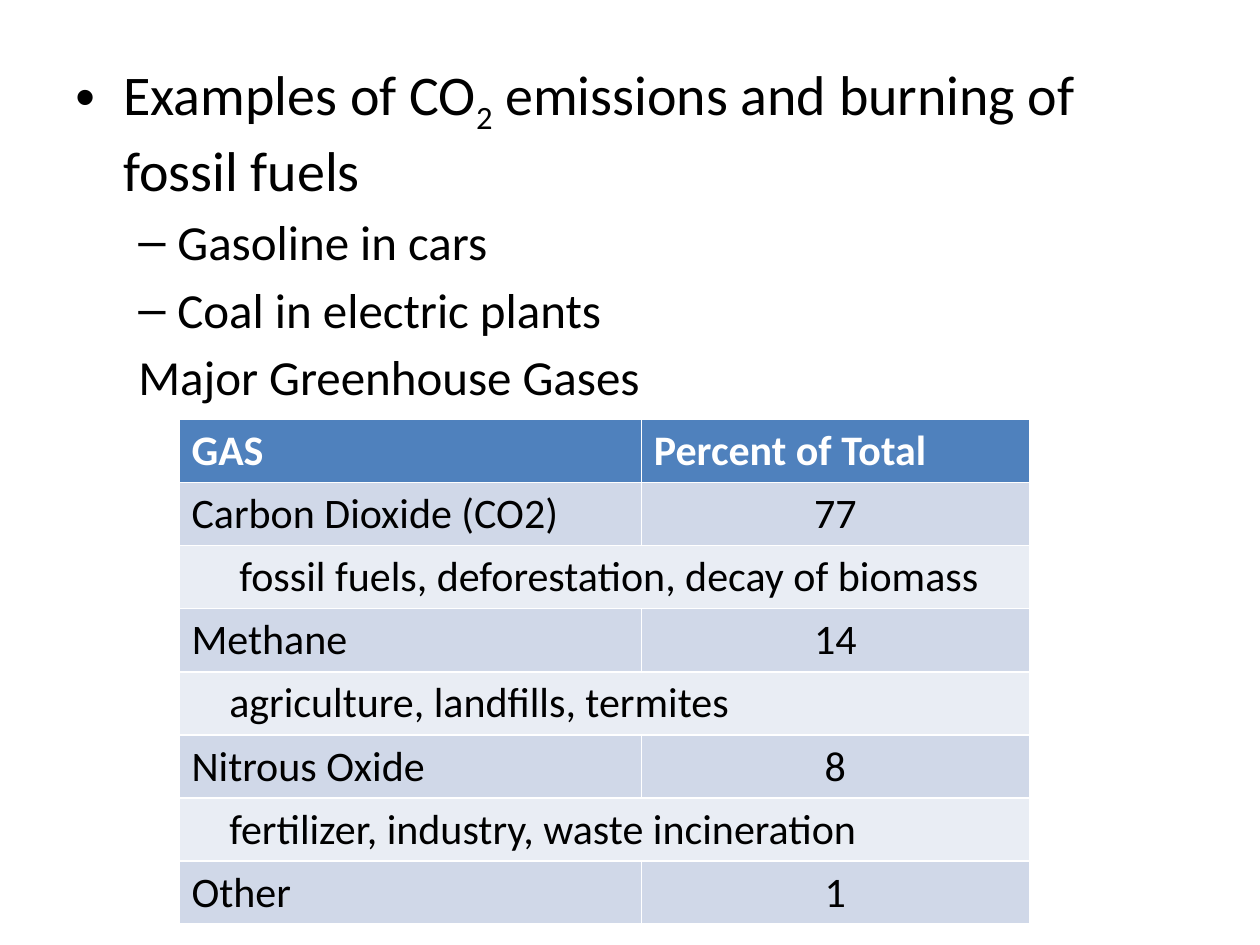
from pptx import Presentation
from pptx.dml.color import RGBColor
from pptx.enum.text import PP_ALIGN
from pptx.oxml.ns import qn
from pptx.util import Inches, Pt
from lxml.etree import SubElement


def paint(code):
    return RGBColor.from_string(code)


class Deck:
    face = "Calibri"
    ink, white = "000000", "FFFFFF"
    head, band, pale = "4F81BD", "D0D8E8", "E9EDF4"

    def __init__(self):
        self.prs = Presentation()
        self.prs.slide_width = Inches(10)
        self.prs.slide_height = Inches(7.5)
        self.slide = self.prs.slides.add_slide(self.prs.slide_layouts[6])

    def style(self, para, size, color, bold=False):
        font = para.font
        font.name, font.size, font.bold = self.face, Pt(size), bold
        font.color.rgb = paint(color)

    def body(self, items, left, top, width, height):
        box = self.slide.shapes.add_textbox(
            Inches(left), Inches(top), Inches(width), Inches(height))
        frame = box.text_frame
        frame.word_wrap = True
        for i, item in enumerate(items):
            para = frame.paragraphs[0] if i == 0 else frame.add_paragraph()
            self.point(para, *item)

    def point(self, para, parts, level, size, left, hang, mark):
        para.level = level
        para.space_before = Pt(5)
        props = para._p.get_or_add_pPr()
        props.set("marL", str(Inches(left)))
        props.set("indent", str(Inches(-hang)))
        if mark:
            SubElement(props, qn("a:buFont")).set("typeface", "Arial")
            SubElement(props, qn("a:buChar")).set("char", mark)
        else:
            SubElement(props, qn("a:buNone"))
        self.style(para, size, self.ink)
        for text, shift in parts:
            run = para.add_run()
            run.text = text
            if shift:
                run.font._element.set("baseline", str(shift * 1000))

    def cell(self, cell, text, fill, color, bold=False, mid=False, inset=0):
        cell.fill.solid()
        cell.fill.fore_color.rgb = paint(fill)
        cell.margin_left = Inches(0.1 + inset)
        para = cell.text_frame.paragraphs[0]
        para.text = text
        if mid:
            para.alignment = PP_ALIGN.CENTER
        self.style(para, 24, color, bold)

    def table(self, heads, gases, left, top, widths, step):
        rows = [(name, rate, 0) for name, rate in heads]
        for name, rate, source, inset in gases:
            rows.append((name, rate, 0))
            if source:
                rows.append((source, None, inset))
        grid = self.slide.shapes.add_table(
            len(rows), len(widths), Inches(left), Inches(top),
            Inches(sum(widths)), Inches(step * len(rows))).table
        for col, width in zip(grid.columns, widths):
            col.width = Inches(width)
        for r, (name, rate, inset) in enumerate(rows):
            first, last = grid.cell(r, 0), grid.cell(r, 1)
            if rate is None:
                first.merge(last)
                self.cell(first, name, self.pale, self.ink, inset=inset)
            elif r == 0:
                for cell, text in ((first, name), (last, rate)):
                    self.cell(cell, text, self.head, self.white, bold=True)
            else:
                self.cell(first, name, self.band, self.ink)
                self.cell(last, rate, self.band, self.ink, mid=True)

    def save(self):
        self.prs.save("out.pptx")


def main():
    deck = Deck()
    title = [("Examples of CO", 0), ("2", -25),
             (" emissions and burning of fossil fuels", 0)]
    deck.body([
        (title, 0, 32, 0.38, 0.38, "•"),
        ([("Gasoline in cars", 0)], 1, 28, 0.81, 0.31, "–"),
        ([("Coal in electric plants", 0)], 1, 28, 0.81, 0.31, "–"),
        ([("Major Greenhouse Gases", 0)], 1, 28, 0.5, 0, None),
    ], 0.5, 0.42, 9, 6.93)
    deck.table([("GAS", "Percent of Total")], [
        ("Carbon Dioxide (CO2)", "77",
         "fossil fuels, deforestation, decay of biomass", 0.38),
        ("Methane", "14", "agriculture, landfills, termites", 0.3),
        ("Nitrous Oxide", "8",
         "fertilizer, industry, waste incineration", 0.3),
        ("Other", "1", None, 0),
    ], 1.42, 3.33, (3.67, 3.08), 0.5)
    deck.save()


if __name__ == "__main__":
    main()
